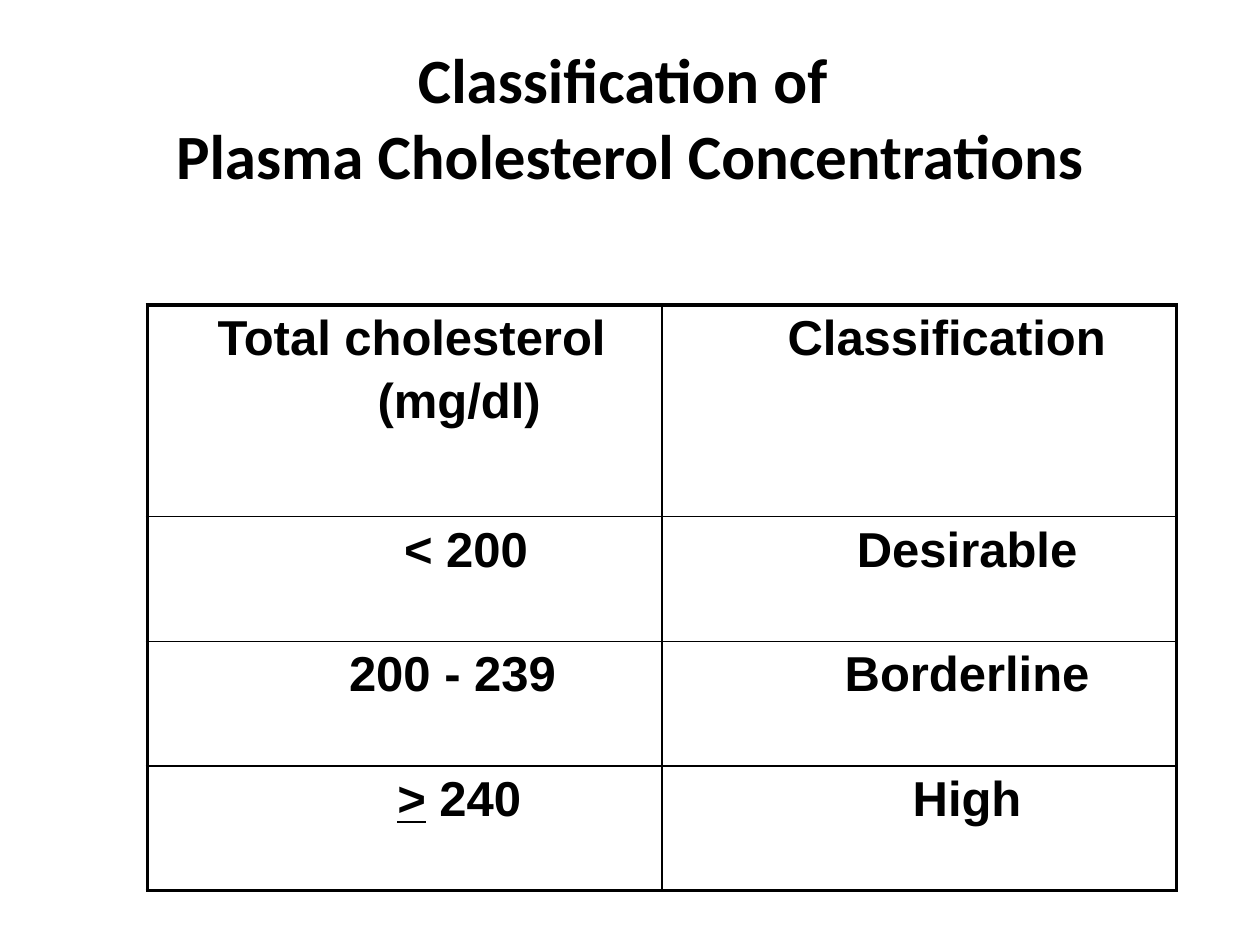
from pptx import Presentation
from pptx.dml.color import RGBColor as Rgb
from pptx.enum.text import MSO_ANCHOR as Anchor, PP_ALIGN as Align
from pptx.oxml.ns import qn
from pptx.util import Inches, Pt
from lxml.etree import SubElement as Sub

BLACK = Rgb(0, 0, 0)
WIDE, HIGH = 10, 7.5
SPACE = 0.108
THICK, THIN = 2.25, 1
HEAD = {"name": "Calibri", "size": Pt(36), "bold": True}
BODY = {"name": "Arial", "size": Pt(28), "bold": True}

ROWS = [
    (1.68, [[(1, ["Total cholesterol"]), (8, ["(mg/dl)"])], [(4, ["Classification"])]]),
    (0.99, [[(9, ["< 200"])], [(7, ["Desirable"])]]),
    (0.99, [[(7, ["200 - 239"])], [(7, ["Borderline"])]]),
    (0.99, [[(8, [">", " 240"])], [(7, ["High"])]]),
]


class Deck:
    def __init__(self):
        self.prs = Presentation()
        self.prs.slide_width, self.prs.slide_height = Inches(WIDE), Inches(HIGH)
        self.slide = self.prs.slides.add_slide(self.prs.slide_layouts[6])

    def area(self, x, y, w, h):
        return [Inches(part * size) for part, size in zip((x, y, w, h), (WIDE, HIGH) * 2)]

    def style(self, font, form):
        for key, val in form.items():
            setattr(font, key, val)
        font.color.rgb = BLACK

    def title(self, text, *box):
        frame = self.slide.shapes.add_textbox(*self.area(*box)).text_frame
        frame.word_wrap = True
        frame.vertical_anchor = Anchor.MIDDLE
        para = frame.paragraphs[0]
        para.text = text
        para.alignment = Align.CENTER
        for run in para.runs:
            self.style(run.font, HEAD)

    def border(self, cell, sides):
        props = cell._tc.get_or_add_tcPr()
        for side, width in sides.items():
            line = Sub(props, qn(f"a:ln{side}"), w=str(Pt(width)))
            Sub(Sub(line, qn("a:solidFill")), qn("a:srgbClr"), val=str(BLACK))

    def fill(self, cell, paras):
        frame = cell.text_frame
        for i, (spaces, parts) in enumerate(paras):
            para = frame.add_paragraph() if i else frame.paragraphs[0]
            para.alignment = Align.CENTER
            if i:
                para.space_before = Pt(5)
            para._p.get_or_add_pPr().set("marL", str(Inches(spaces * SPACE)))
            for part in parts:
                run = para.add_run()
                run.text = part
                self.style(run.font, BODY | {"underline": part == ">"})

    def table(self, rows, *box):
        count, cols = len(rows), len(rows[0][1])
        grid = self.slide.shapes.add_table(count, cols, *self.area(*box)).table
        grid.first_row = grid.horz_banding = False
        for r, (high, cells) in enumerate(rows):
            grid.rows[r].height = Inches(high)
            for c, paras in enumerate(cells):
                cell = grid.cell(r, c)
                edges = {"L": c == 0, "R": c == cols - 1, "T": r == 0, "B": r == count - 1}
                self.border(cell, {k: THICK if out else THIN for k, out in edges.items()})
                cell.fill.background()
                self.fill(cell, paras)

    def save(self):
        self.prs.save("out.pptx")


def main():
    deck = Deck()
    deck.title("Classification of \vPlasma Cholesterol Concentrations", 0.05, 0.04, 0.9, 1 / 6)
    deck.table(ROWS, 0.117, 2.42 / HIGH, 0.817, 4.65 / HIGH)
    deck.save()


if __name__ == "__main__":
    main()
